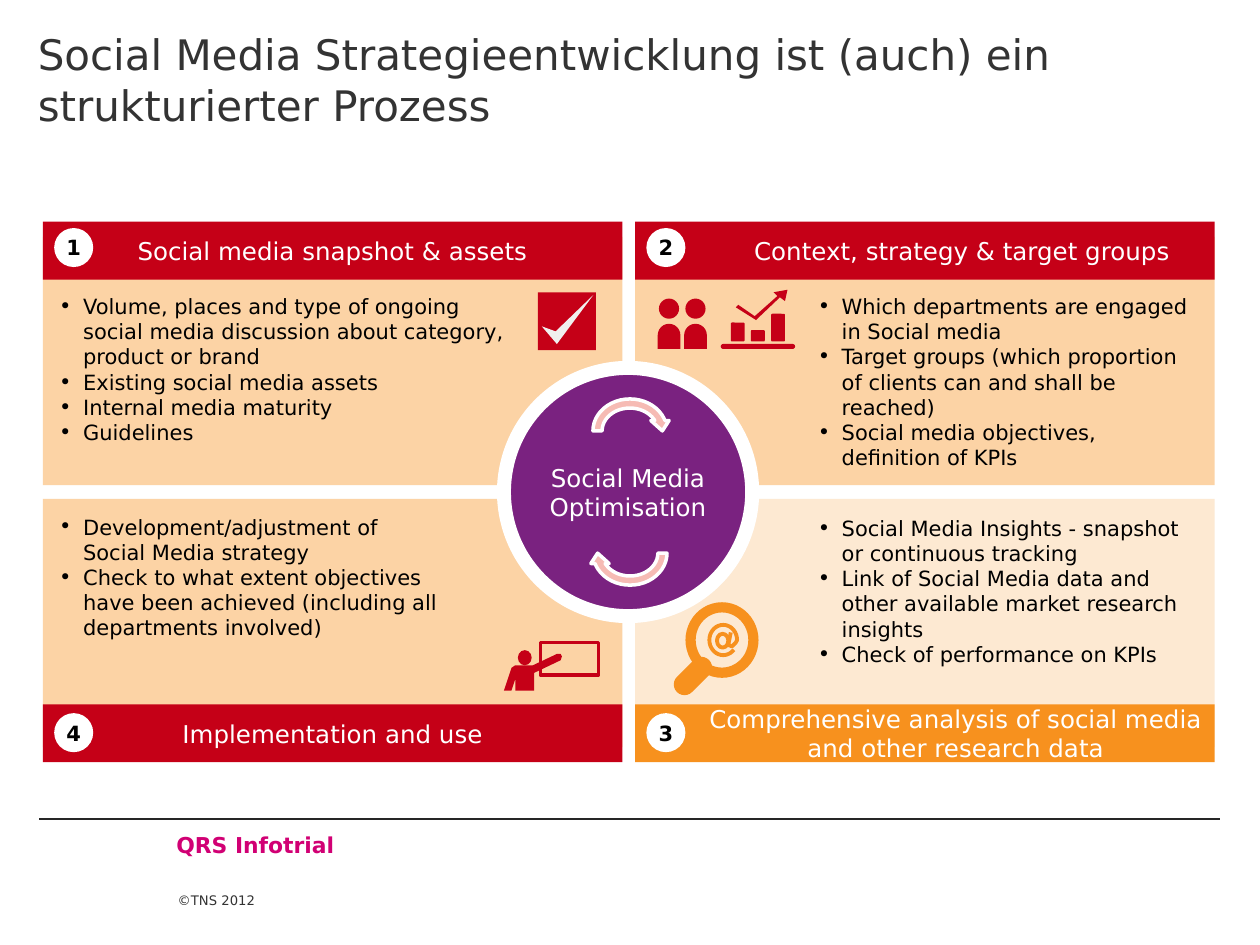
from math import cos, radians, sin

from pptx import Presentation
from pptx import util as u
from pptx.dml.color import RGBColor
from pptx.enum import shapes, text
from pptx.oxml.ns import qn

FONT = "DejaVu Sans"
RED, ORANGE, PEACH, CREAM = "C50017", "F7911E", "FCD3A5", "FDE9D2"
PURPLE, PINK, WHITE, BLACK, GREY = "7A2280", "F6BBB4", "FFFFFF", "000000", "333333"
S, A, V = shapes.MSO_SHAPE, text.PP_ALIGN, text.MSO_ANCHOR

# Content: number, heading, indent, bar colour, panel colour, list place, points
TITLE = "Social Media Strategieentwicklung ist (auch) ein strukturierter Prozess"
STEPS = [
    ("1", "Social media snapshot & assets", 0, RED, PEACH, (0.47, 2.33, 3.7), [
        "Volume, places and type of ongoing social media discussion about category, "
        "product or brand",
        "Existing social media assets",
        "Internal media maturity",
        "Guidelines"]),
    ("2", "Context, strategy & target groups", 0.59, RED, PEACH, (6.49, 2.33, 2.99), [
        "Which departments are engaged in Social media",
        "Target groups (which proportion of clients can and shall be reached)",
        "Social media objectives, definition of KPIs"]),
    ("4", "Implementation and use", 0, RED, PEACH, (0.47, 4.08, 3.53), [
        "Development/adjustment of\nSocial Media strategy",
        "Check to what extent objectives\n"
        "have been achieved (including all departments involved)"]),
    ("3", "Comprehensive analysis of social media and other research data", 0.49,
     ORANGE, CREAM, (6.49, 4.09, 2.99), [
        "Social Media Insights - snapshot or continuous tracking",
        "Link of Social Media data and other available market research insights",
        "Check of performance on KPIs"]),
]
COLS = (0.34, 5.04)
ROWS = ((1.88, 1.76, 1.81), (3.96, 5.59, 5.66))  # panel, bar and badge tops

# Icon outlines
TREND = [(5.84, 2.44), (6, 2.54), (6.19, 2.36), (6.23, 2.39), (6.25, 2.3),
         (6.14, 2.32), (6.17, 2.35), (5.99, 2.51), (5.86, 2.42)]
TICK = [(4.3, 2.59), (4.42, 2.73), (4.71, 2.34), (4.41, 2.63)]
SPEAKER = [(4, 5.48), (4.06, 5.3), (4.09, 5.28), (4.23, 5.28), (4.42, 5.19),
           (4.45, 5.19), (4.46, 5.21), (4.45, 5.24), (4.24, 5.34), (4.24, 5.48),
           (4.09, 5.48), (4.09, 5.39), (4.06, 5.48)]
HOOK = [(5.8, 5.02), (5.78, 5.12), (5.81, 5.13), (5.84, 5.1)]
BARS = [(5.8, 2.56, 0.11, 0.15), (5.96, 2.62, 0.11, 0.09), (6.12, 2.49, 0.11, 0.22)]

prs = Presentation()
prs.slide_width, prs.slide_height = u.Inches(10), u.Inches(7.5)
slide = prs.slides.add_slide(prs.slide_layouts[5])
page = slide.shapes


def rgb(code):
    return RGBColor.from_string(code)


def paint(item, fill=None, line=None, width=1):
    item.shadow.inherit = False
    if fill:
        item.fill.solid()
        item.fill.fore_color.rgb = rgb(fill)
    else:
        item.fill.background()
    if line:
        item.line.color.rgb = rgb(line)
        item.line.width = u.Pt(width)
    else:
        item.line.fill.background()
    return item


def shape(kind, at, fill=None, line=None, width=1):
    return paint(page.add_shape(kind, *map(u.Inches, at)), fill, line, width)


def outline(pts, fill=None, line=None, width=1, close=True):
    start, *rest = [(u.Inches(x), u.Inches(y)) for x, y in pts]
    pen = page.build_freeform(*start)
    pen.add_line_segments(rest, close=close)
    return paint(pen.convert_to_shape(), fill, line, width)


def write(item, lines, size, color, bold=False, align=A.LEFT, anchor=V.TOP,
          inset=(0, 0, 0, 0), wrap=True, left=0, bullet=False):
    frame = item.text_frame
    frame.word_wrap = wrap
    frame.auto_size = text.MSO_AUTO_SIZE.NONE
    frame.vertical_anchor = anchor
    (frame.margin_left, frame.margin_top,
     frame.margin_right, frame.margin_bottom) = map(u.Inches, inset)
    for i, words in enumerate(lines):
        para = frame.add_paragraph() if i else frame.paragraphs[0]
        para.text = words
        para.alignment = align
        props = para._p.get_or_add_pPr()
        if left:
            props.set("marL", str(u.Inches(left)))
        if bullet:
            props.set("indent", str(-u.Inches(left)))
            props.append(props.makeelement(qn("a:buFont"), {"typeface": FONT}))
            props.append(props.makeelement(qn("a:buChar"), {"char": "•"}))
        for run in para.runs:
            run.font.name, run.font.size, run.font.bold = FONT, u.Pt(size), bold
            run.font.color.rgb = rgb(color)


def box(at, lines, *args, **kw):
    write(page.add_textbox(*map(u.Inches, at)), lines, *args, **kw)


# Title and footer
head = page.title
head.left, head.top, head.width, head.height = map(u.Inches, (0, 0, 10, 1.13))
write(head, [TITLE], 24, GREY, inset=(0.3, 0.23, 0.3, 0))
box((1.41, 6.92, 0.83, 0.58), ["©TNS 2012"], 7.5, GREY, anchor=V.BOTTOM,
    inset=(0, 0, 0, 0.29))
rule = page.add_connector(shapes.MSO_CONNECTOR.STRAIGHT,
                          *map(u.Inches, (0.31, 6.5, 9.68, 6.5)))
rule.line.color.rgb, rule.line.width = rgb("262626"), u.Pt(0.75)
props = rule._element.spPr
props.append(props.makeelement(qn("a:effectLst"), {}))
box((0.86, 6.5, 8.26, 0.41), ["QRS Infotrial"], 12.5, "D10074", bold=True,
    inset=(0.54, 0.1, 0.1, 0.05))

# Four steps: panel, bar, badge and list
for i, (num, name, left, tone, back, (x, y, w), points) in enumerate(STEPS):
    col = COLS[i % 2]
    panel, bar, badge = ROWS[i // 2]
    shape(S.RECTANGLE, (col, panel, 4.6, 1.97), back)
    write(shape(S.RECTANGLE, (col, bar, 4.6, 0.46), tone), [name], 14, WHITE,
          align=A.CENTER, anchor=V.MIDDLE, left=left)
    write(shape(S.OVAL, (col + 0.09, badge, 0.31, 0.31), WHITE), [num], 12, BLACK,
          bold=True, align=A.CENTER, anchor=V.MIDDLE, wrap=False)
    box((x, y, w, 1.47), points, 12, BLACK, left=0.19, bullet=True)

# Centre circle with two turning arrows
write(shape(S.OVAL, (4, 2.92, 1.97, 1.97), PURPLE, WHITE, 8),
      ["Social Media Optimisation"], 14, WHITE, align=A.CENTER, anchor=V.MIDDLE)
for y, turn in ((3.13, 0), (4.1, 180)):
    shape(S.CIRCULAR_ARROW, (4.67, y, 0.66, 0.58), PINK, WHITE, 2).rotation = turn

# Tick box
shape(S.RECTANGLE, (4.27, 2.32, 0.46, 0.46), RED)
outline(TICK, "F0EFEE")

# Two people
for x in (5.22, 5.43):
    shape(S.OVAL, (x + 0.01, 2.37, 0.16, 0.16), RED)
    body = shape(S.ROUND_2_SAME_RECTANGLE, (x, 2.57, 0.18, 0.2), RED)
    body.adjustments[0] = 0.5

# Bar chart with trend arrow
shape(S.ROUNDED_RECTANGLE, (5.72, 2.73, 0.59, 0.04), RED).adjustments[0] = 0.5
for at in BARS:
    shape(S.ROUNDED_RECTANGLE, at, RED).adjustments[0] = 0.1
outline(TREND, RED)

# Magnifier with at sign
grip = shape(S.ROUNDED_RECTANGLE, (5.32, 5.28, 0.36, 0.17), ORANGE)
grip.adjustments[0], grip.rotation = 0.5, -45
shape(S.DONUT, (5.44, 4.78, 0.58, 0.6), ORANGE).adjustments[0] = 0.14
shape(S.OVAL, (5.69, 5.03, 0.09, 0.11), None, ORANGE, 2.2)
ring = [(5.74 + 0.11 * cos(radians(d)), 5.08 - 0.12 * sin(radians(d)))
        for d in range(0, 321, 10)]
outline(HOOK + ring, None, ORANGE, 2.2, close=False)

# Speaker at a board
shape(S.RECTANGLE, (4.29, 5.1, 0.46, 0.26), None, RED, 2)
shape(S.OVAL, (4.11, 5.16, 0.11, 0.12), RED)
outline(SPEAKER, RED)

prs.save("out.pptx")
